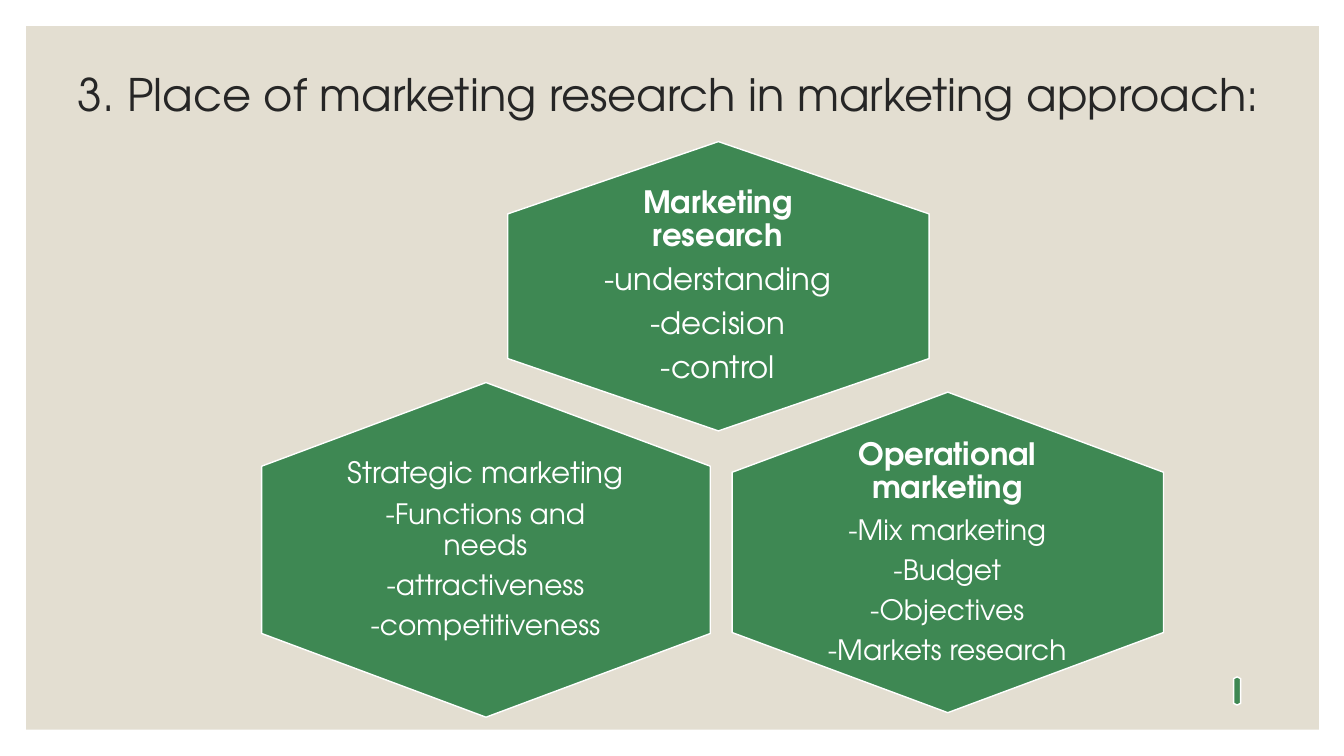
from pptx import Presentation
from pptx.dml.color import RGBColor
from pptx.enum.shapes import MSO_SHAPE as Shape
from pptx.enum.text import MSO_ANCHOR as Anchor, PP_ALIGN as Align
from pptx.util import Inches, Pt

FONT = "TeX Gyre Adventor"
GREEN, WHITE, SAND, INK = "3E8853", "FFFFFF", "E3DED1", "262626"
TITLE = "3. Place of marketing research in marketing approach:"

HEXES = [
    (5.69, 0.75, 2.87, 4.18),
    (12.13, 6.82, 0.28, 0.07),
    (3.16, 3.23, 3.32, 4.45),
    (7.81, 3.34, 3.18, 4.28),
]
NOTES = [
    ((5.73, 1.88, 2.78, 1.92), 0.09, (22, True), 22,
     ["Marketing research", "-understanding", "-decision", "-control"]),
    ((3.33, 4.35, 2.97, 2.21), 0.09, (21, False), 20,
     ["Strategic marketing", "-Functions and needs", "-attractiveness",
      "-competitiveness"]),
    ((7.97, 4.42, 2.85, 2.12), 0, (22, True), 20,
     ["Operational marketing", "-Mix marketing", "-Budget", "-Objectives",
      "-Markets research"]),
]

deck = Presentation()
deck.slide_width, deck.slide_height = Inches(13.33), Inches(7.5)
slide = deck.slides.add_slide(deck.slide_layouts[6])


def color(code):
    return RGBColor.from_string(code)


def place(box):
    return [Inches(n) for n in box]


def draw(kind, box, fill):
    shape = slide.shapes.add_shape(kind, *place(box))
    shape.shadow.inherit = False
    shape.fill.solid()
    shape.fill.fore_color.rgb = color(fill)
    return shape


def write(box, lines, ink, align, inset=(0.1, 0.05)):
    frame = slide.shapes.add_textbox(*place(box)).text_frame
    side, edge = place(inset)
    look = {"word_wrap": True, "vertical_anchor": Anchor.MIDDLE,
            "margin_left": side, "margin_right": side,
            "margin_top": edge, "margin_bottom": edge}
    for key, value in look.items():
        setattr(frame, key, value)
    for i, (text, size, bold, gap) in enumerate(lines):
        para = frame.add_paragraph() if i else frame.paragraphs[0]
        para.alignment = align
        para.line_spacing = 0.9
        para.space_after = Pt(gap)
        run = para.add_run()
        run.text = text
        for key, value in {"name": FONT, "size": Pt(size), "bold": bold}.items():
            setattr(run.font, key, value)
        run.font.color.rgb = color(ink)


draw(Shape.RECTANGLE, (0.26, 0.26, 12.82, 6.98), SAND).line.fill.background()
write((0.67, 0.53, 12.18, 0.87), [(TITLE, 32, False, 0)], INK, Align.LEFT)

for box in HEXES:
    cell = draw(Shape.HEXAGON, box, GREEN)
    cell.rotation = 90
    cell.adjustments[0] = 0.25
    cell.line.color.rgb = color(WHITE)
    cell.line.width = Pt(1)

for box, inset, head, size, texts in NOTES:
    styles = [head] + [(size, False)] * (len(texts) - 1)
    lines = [(text, pts, bold, round(pts * 0.35, 2))
             for text, (pts, bold) in zip(texts, styles)]
    write(box, lines, WHITE, Align.CENTER, (inset, inset))

deck.save("out.pptx")
